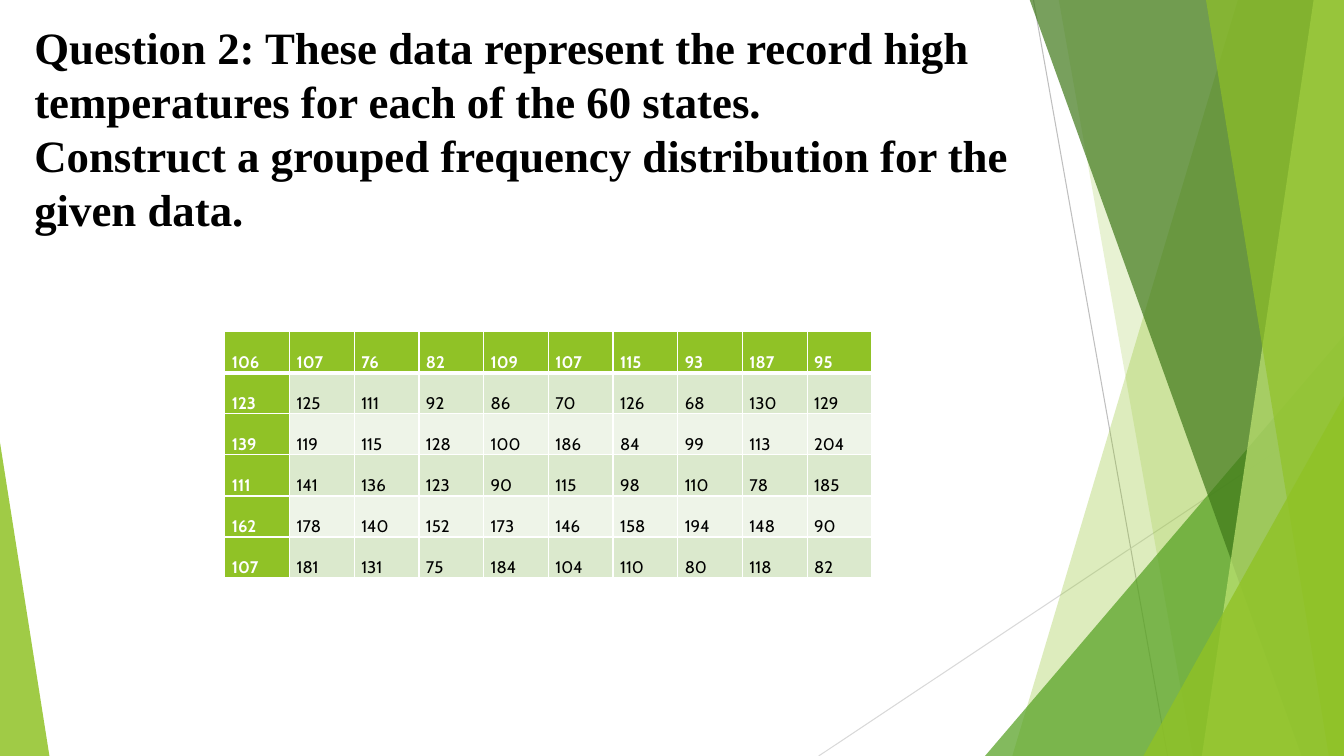
from typing import NamedTuple

from lxml.etree import SubElement
from pptx import Presentation
from pptx.dml.color import RGBColor
from pptx.enum.shapes import MSO_CONNECTOR, MSO_SHAPE
from pptx.enum.text import MSO_ANCHOR, PP_ALIGN
from pptx.oxml.ns import qn
from pptx.util import Inches, Pt

GREEN = "90C226"
WHITE = "FFFFFF"
BLACK = "000000"
BANDS = ("EEF4E8", "DBE9CD")
RIGHT, TOP, FLOOR = 13.33, -0.01, 7.5
TITLE = (
    "Question 2: These data represent the record high "
    "temperatures for each of the 60 states.\v"
    "Construct a grouped frequency distribution for the given data."
)
DATA = """
106 107 76 82 109 107 115 93 187 95
123 125 111 92 86 70 126 68 130 129
139 119 115 128 100 186 84 99 113 204
111 141 136 123 90 115 98 110 78 185
162 178 140 152 173 146 158 194 148 90
107 181 131 75 184 104 110 80 118 82
"""


class Ray(NamedTuple):
    x1: float
    y1: float
    x2: float
    y2: float
    color: str


class Blade(NamedTuple):
    top: float
    foot: float
    color: str
    alpha: int


class Wedge(NamedTuple):
    left: float
    top: float
    width: float
    peak: float
    color: str
    alpha: int


RAYS = [
    Ray(10.25, 0, 11.58, FLOOR, "BFBFBF"),
    Ray(RIGHT, 4.03, 8.12, FLOOR, "D9D9D9"),
]
PANES = [
    Blade(12.28, 10.04, GREEN, 30),
    Blade(10.5, 11.83, GREEN, 20),
    Wedge(9.77, 3.33, 3.56, 1, "54A021", 72),
    Blade(10.21, 12.91, "3F7819", 70),
    Blade(13.03, 11.92, "C0E474", 70),
    Blade(11.96, 13.18, GREEN, 65),
    Wedge(11.34, 3.93, 1.99, 1, GREEN, 80),
    Wedge(0, 4.39, 0.49, 0, GREEN, 85),
]


def paint(target, color: str) -> None:
    target.solid()
    target.fore_color.rgb = RGBColor.from_string(color)


def draw_ray(shapes, ray: Ray) -> None:
    line = shapes.add_connector(
        MSO_CONNECTOR.STRAIGHT, *map(Inches, (ray.x1, ray.y1, ray.x2, ray.y2))
    )
    paint(line.line.fill, ray.color)
    line.line.width = Pt(0.75)
    SubElement(line._element.spPr, qn("a:effectLst"))


def draw_pane(shapes, pane: Blade | Wedge) -> None:
    if isinstance(pane, Blade):
        form = shapes.build_freeform(Inches(pane.top), Inches(TOP))
        ends = [(RIGHT, TOP), (RIGHT, FLOOR), (pane.foot, FLOOR)]
        form.add_line_segments([(Inches(x), Inches(y)) for x, y in ends])
        shape = form.convert_to_shape()
    else:
        shape = shapes.add_shape(
            MSO_SHAPE.ISOSCELES_TRIANGLE,
            *map(Inches, (pane.left, pane.top, pane.width, FLOOR - pane.top)),
        )
        shape.adjustments[0] = pane.peak
    shape.shadow.inherit = False
    shape.line.fill.background()
    paint(shape.fill, pane.color)
    tint = shape._element.spPr.find(qn("a:solidFill"))[0]
    SubElement(tint, qn("a:alpha"), val=str(pane.alpha * 1000))


def set_title(title) -> None:
    title.left, title.top, title.width, title.height = map(
        Inches, (0.24, 0.15, 9.9, 6.75)
    )
    frame = title.text_frame
    frame.word_wrap = True
    frame.vertical_anchor = MSO_ANCHOR.TOP
    frame.text = TITLE
    para = frame.paragraphs[0]
    para.alignment = PP_ALIGN.LEFT
    set_font(para.font, "Times New Roman", 32, BLACK, True)


def set_font(font, name: str, size: int, color: str, bold: bool) -> None:
    font.name, font.size, font.bold = name, Pt(size), bold
    paint(font.fill, color)


def set_edge(cell, side: str, width: float) -> None:
    props = cell._tc.get_or_add_tcPr()
    edge = SubElement(props, qn(f"a:{side}"), w=str(Pt(width)))
    fill = SubElement(edge, qn("a:solidFill"))
    SubElement(fill, qn("a:srgbClr"), val=WHITE)


def set_cell(cell, text: str, row: int, col: int) -> None:
    head = row == 0 or col == 0
    cell.margin_left = cell.margin_right = Inches(0.07)
    cell.margin_top = cell.margin_bottom = 0
    cell.vertical_anchor = MSO_ANCHOR.MIDDLE
    cell.text = text
    para = cell.text_frame.paragraphs[0]
    para.alignment = PP_ALIGN.JUSTIFY
    para.line_spacing = 2.0
    set_font(para.font, "Cabin", 12, WHITE if head else BLACK, head)
    for side in ("lnL", "lnR", "lnT", "lnB"):
        thick = (row, side) in ((0, "lnB"), (1, "lnT"))
        set_edge(cell, side, 3 if thick else 1)
    paint(cell.fill, GREEN if head else BANDS[row % 2])


def draw_table(shapes) -> None:
    rows = [line.split() for line in DATA.strip().splitlines()]
    table = shapes.add_table(
        len(rows), len(rows[0]), *map(Inches, (2.23, 3.29, 6.42, 2.06))
    ).table
    table.first_col = True
    for r, row in enumerate(rows):
        table.rows[r].height = Inches(0.3)
        for c, text in enumerate(row):
            set_cell(table.cell(r, c), text, r, c)


def main() -> None:
    deck = Presentation()
    deck.slide_width, deck.slide_height = Inches(RIGHT), Inches(FLOOR)
    slide = deck.slides.add_slide(deck.slide_layouts[5])
    shapes = slide.shapes
    title = shapes.title
    for ray in RAYS:
        draw_ray(shapes, ray)
    for pane in PANES:
        draw_pane(shapes, pane)
    shapes._spTree.append(title._element)
    set_title(title)
    draw_table(shapes)
    deck.save("out.pptx")


if __name__ == "__main__":
    main()
